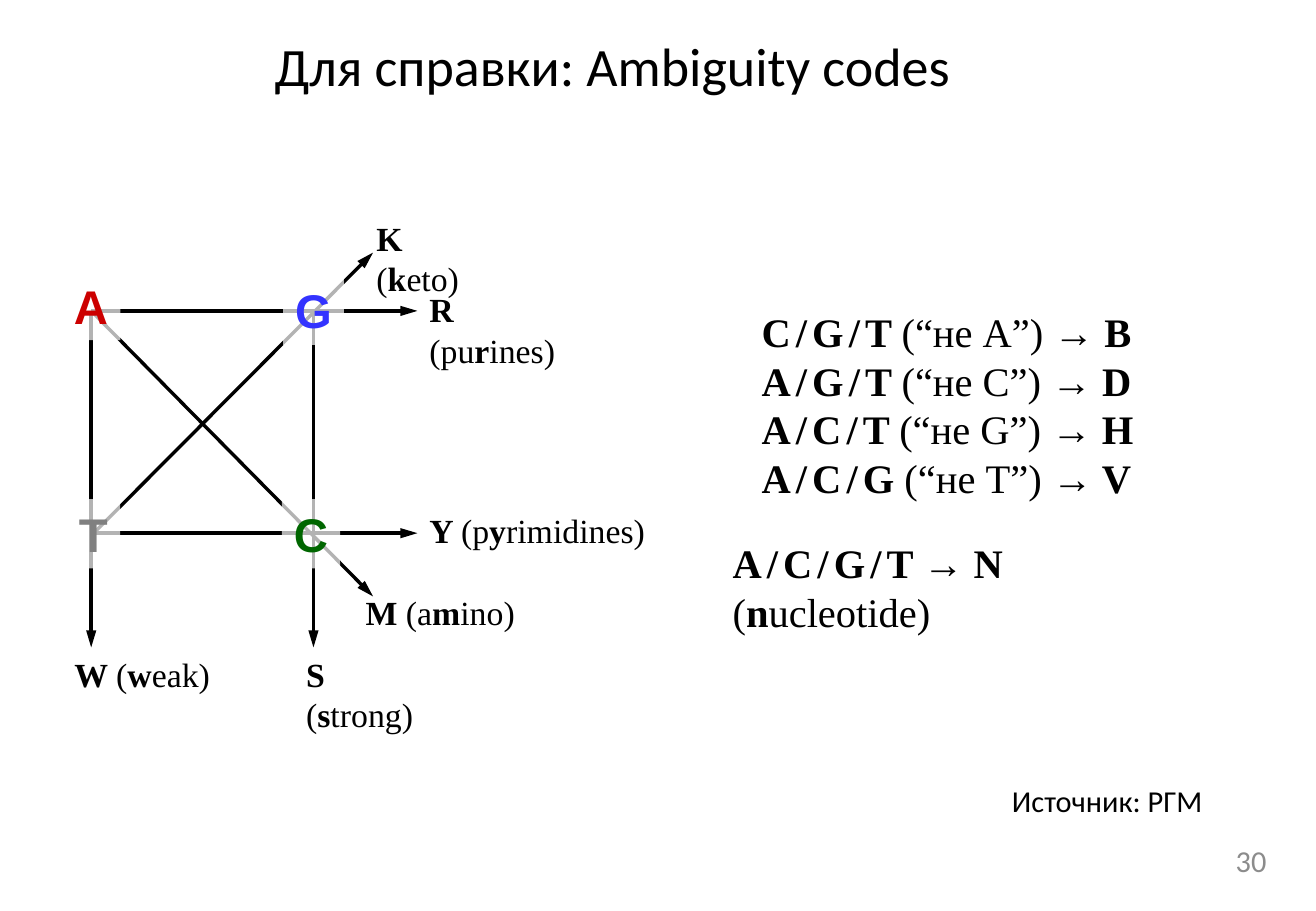
"""Build the slide of nucleotide ambiguity codes."""
from dataclasses import dataclass
from typing import NamedTuple

from lxml import etree
from pptx import Presentation
from pptx.dml.color import RGBColor
from pptx.enum.shapes import MSO_CONNECTOR, MSO_SHAPE
from pptx.enum.text import MSO_ANCHOR, MSO_AUTO_SIZE, PP_ALIGN
from pptx.oxml.ns import qn
from pptx.util import Inches, Length, Pt

STRAIGHT = MSO_CONNECTOR.STRAIGHT
RECT = MSO_SHAPE.RECTANGLE
TOP, MIDDLE = MSO_ANCHOR.TOP, MSO_ANCHOR.MIDDLE
GROW = MSO_AUTO_SIZE.SHAPE_TO_FIT_TEXT
LEFT, MID, RIGHT = PP_ALIGN.LEFT, PP_ALIGN.CENTER, PP_ALIGN.RIGHT

WIDE, HIGH = Inches(10.83), Inches(7.5)


@dataclass(frozen=True)
class Theme:
    sans: str = "Calibri"
    serif: str = "Times New Roman"
    bold: str = "Arial"
    ink: str = "000000"
    page: str = "FFFFFF"
    dim: str = "8C8C8C"
    red: str = "CC0000"
    blue: str = "3333FF"
    gray: str = "808080"
    green: str = "006600"
    title: int = 32
    node: int = 28
    code: int = 24
    label: int = 20
    note: int = 18
    gap: int = 12
    line: int = 2
    alpha: str = "70000"


THEME = Theme()


class Box(NamedTuple):
    """A place in percent of the slide's width and height."""
    x: float
    y: float
    w: float
    h: float


class Run(NamedTuple):
    text: str
    size: int
    font: str = THEME.serif
    color: str = THEME.ink
    bold: bool = False


class Arrow(NamedTuple):
    x: float
    y: float
    to_x: float
    to_y: float


class Label(NamedTuple):
    box: Box
    words: tuple[str, ...]
    align: PP_ALIGN = LEFT


class Node(NamedTuple):
    box: Box
    base: str
    color: str


COL_A, COL_G, END_X = 6.93, 23.82, 31.72
ROW_A, ROW_T, END_Y = 34.13, 58.53, 71.07
TIP_X = 28.35
TALL, SIDE = 5.73, 7.6

ARROWS = [
    Arrow(COL_G, ROW_A, COL_G, END_Y),
    Arrow(COL_A, ROW_T, END_X, ROW_T),
    Arrow(COL_A, ROW_A, END_X, ROW_A),
    Arrow(COL_A, ROW_A, COL_A, END_Y),
    Arrow(COL_A, ROW_A, TIP_X, 65.47),
    Arrow(COL_A, 58.8, TIP_X, 27.73),
]
LABELS = [
    Label(Box(27.7, 23.2, 10.71, TALL), ("K ", "(", "k", "eto)")),
    Label(Box(END_X, 31.07, 13.85, TALL), ("R ", "(pu", "r", "ines)")),
    Label(Box(END_X, 55.33, 18.28, TALL), ("Y ", "(p", "y", "rimidines)")),
    Label(Box(26.87, 64.27, 13.2, TALL), ("M ", "(a", "m", "ino)")),
    Label(Box(4.71, END_Y, 12.19, TALL), ("W ", "(", "w", "eak)"), MID),
    Label(Box(22.35, END_Y, 12, TALL), ("S ", "(", "s", "trong)")),
]
NODES = [
    Node(Box(4.71, 29.73, 4.43, SIDE), "A", THEME.red),
    Node(Box(21.51, 30.27, 4.62, SIDE), "G", THEME.blue),
    Node(Box(5.08, 54.8, 4.06, SIDE), "T", THEME.gray),
    Node(Box(21.42, 54.8, 4.43, SIDE), "C", THEME.green),
]
CODES = [("CGT", "A", "B"), ("AGT", "C", "D"), ("ACT", "G", "H"), ("ACG", "T", "V")]


def across(share: float) -> Length:
    """Turn percent of the width into a length."""
    return Length(round(WIDE * share / 100))


def down(share: float) -> Length:
    """Turn percent of the height into a length."""
    return Length(round(HIGH * share / 100))


def frame(box: Box) -> tuple[Length, Length, Length, Length]:
    """Turn a box into lengths."""
    return across(box.x), down(box.y), across(box.w), down(box.h)


def write(shape, lines: list[list[Run]], align=LEFT, wrap=False, anchor=TOP) -> None:
    """Fill a shape with lines of runs."""
    body = shape.text_frame
    body.word_wrap, body.auto_size = wrap, GROW
    body.vertical_anchor = anchor
    for row, runs in enumerate(lines):
        para = body.add_paragraph() if row else body.paragraphs[0]
        para.alignment = align
        for item in runs:
            if item.text == "\n":
                para.add_line_break()
                continue
            run = para.add_run()
            run.text = item.text
            run.font.size, run.font.name = Pt(item.size), item.font
            run.font.bold = item.bold
            run.font.color.rgb = RGBColor.from_string(item.color)


def mixed(words: tuple[str, ...], size: int, start: int = 0) -> list[Run]:
    """Make runs that turn bold on and off; an even start means bold first."""
    return [Run(word, size, bold=spot % 2 == 0) for spot, word in enumerate(words, start)]


def spread(bases: str) -> list[Run]:
    """Join bases by slashes with small gaps."""
    gap = Run(" ", THEME.gap, bold=True)
    runs = []
    for mark in "/".join(bases):
        runs += [Run(mark, THEME.code, bold=True), gap]
    return runs[:-1]


def link(slide, arrow: Arrow) -> None:
    """Draw one arrow."""
    line = slide.shapes.add_connector(
        STRAIGHT, across(arrow.x), down(arrow.y), across(arrow.to_x), down(arrow.to_y))
    line.line.color.rgb = RGBColor.from_string(THEME.ink)
    line.line.width = Pt(THEME.line)
    props = line.element.spPr
    etree.SubElement(props.find(qn("a:ln")), qn("a:tailEnd"), type="triangle", w="med", len="lg")
    etree.SubElement(props, qn("a:effectLst"))


def badge(slide, node: Node) -> None:
    """Draw one base on a sheer white square."""
    shape = slide.shapes.add_shape(RECT, *frame(node.box))
    shape.shadow.inherit = False
    shape.line.fill.background()
    shape.fill.solid()
    shape.fill.fore_color.rgb = RGBColor.from_string(THEME.page)
    tint = shape.element.spPr.find(qn("a:solidFill"))[0]
    etree.SubElement(tint, qn("a:alpha"), val=THEME.alpha)
    write(shape, [[Run(node.base, THEME.node, THEME.bold, node.color, True)]])


def main() -> None:
    """Build and save the slide."""
    deck = Presentation()
    deck.slide_width, deck.slide_height = WIDE, HIGH
    slide = deck.slides.add_slide(deck.slide_layouts[5])

    def text(box: Box, lines: list[list[Run]], **style) -> None:
        """Add a text box."""
        write(slide.shapes.add_textbox(*frame(box)), lines, **style)

    title = slide.shapes.title
    title.left, title.top, title.width, title.height = frame(Box(19.94, 2.93, 53.74, 8.53))
    write(title, [[Run("Для справки: Ambiguity codes", THEME.title, THEME.sans)]])

    for arrow in ARROWS:
        link(slide, arrow)
    for node in NODES:
        badge(slide, node)
    for label in LABELS:
        text(label.box, [mixed(label.words, THEME.label)], align=label.align)

    rows = [spread(bases) + mixed((" ", f"(“не {base}”) ", f"→ {code}"), THEME.code)
            for bases, base, code in CODES]
    text(Box(56.97, 33.07, 31.3, 22.93), rows, wrap=True)
    whole = spread("ACGT") + mixed((" → N", "\n"), THEME.code)
    whole += mixed(("(", "n", "ucleotide)"), THEME.code, 1)
    text(Box(54.76, 58.4, 38.23, 6.67), [whole], wrap=True)
    text(Box(75.99, 85.2, 20.13, 5.33),
         [[Run("Источник: РГМ", THEME.note, THEME.sans)]], wrap=True)
    text(Box(70.73, 91.73, 26.41, 5.33),
         [[Run("30", THEME.note, THEME.sans, THEME.dim)]], align=RIGHT, wrap=True, anchor=MIDDLE)
    deck.save("out.pptx")


if __name__ == "__main__":
    main()
